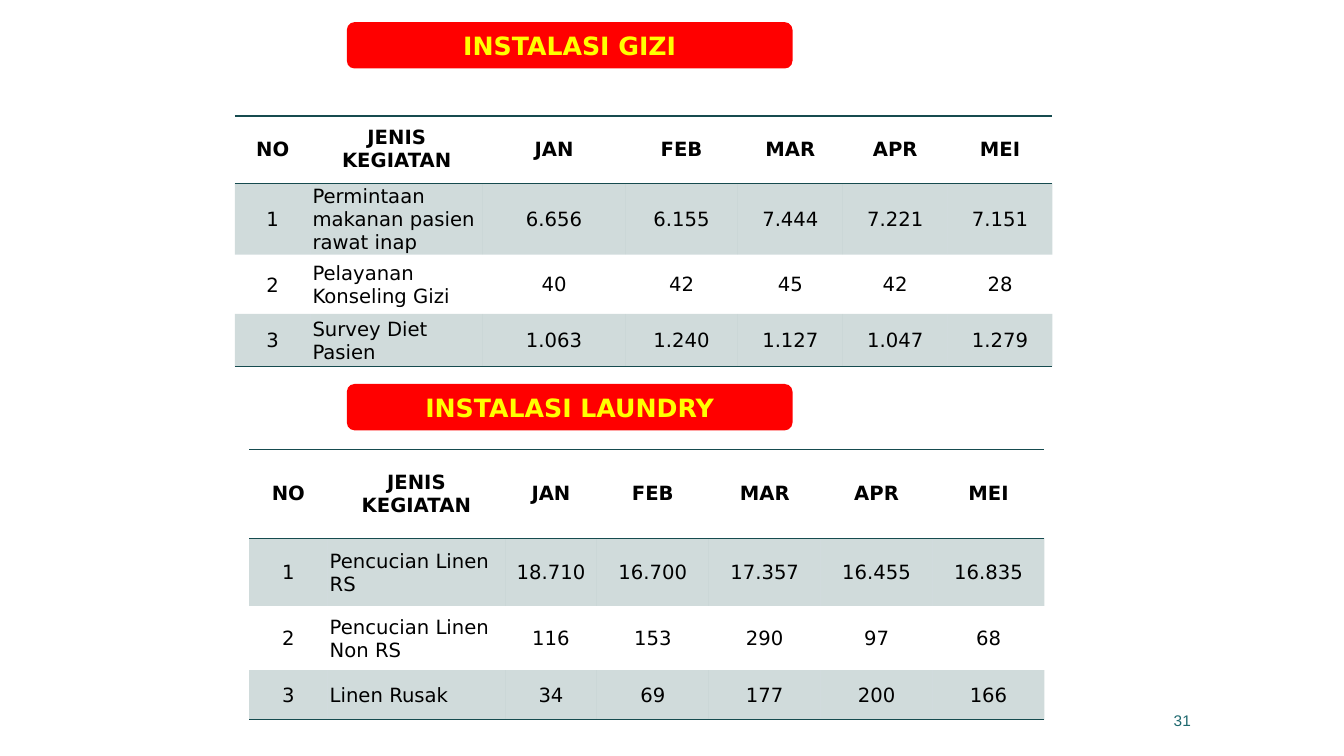
from lxml import etree
from pptx import Presentation
from pptx.dml import color as dml
from pptx.enum import shapes, text
from pptx.oxml import ns
from pptx.util import Inches, Pt

TEAL = "164B4F"
SANS = "DejaVu Sans"
PLAIN = "{2D5ABB26-0587-4C30-8999-92F81FD0307C}"
MID = text.MSO_ANCHOR.MIDDLE
LEFT, CENTER, RIGHT = (text.PP_ALIGN.LEFT, text.PP_ALIGN.CENTER,
                       text.PP_ALIGN.RIGHT)
HEAD = ["NO", "JENIS KEGIATAN", "JAN", "FEB", "MAR", "APR", "MEI"]

GIZI = [
    HEAD,
    ["1", "Permintaan makanan pasien rawat inap",
     "6.656", "6.155", "7.444", "7.221", "7.151"],
    ["2", "Pelayanan Konseling Gizi", "40", "42", "45", "42", "28"],
    ["3", "Survey Diet Pasien", "1.063", "1.240", "1.127", "1.047", "1.279"],
]
LAUNDRY = [
    HEAD,
    ["1", "Pencucian Linen RS",
     "18.710", "16.700", "17.357", "16.455", "16.835"],
    ["2", "Pencucian Linen Non RS", "116", "153", "290", "97", "68"],
    ["3", "Linen Rusak", "34", "69", "177", "200", "166"],
]


def rgb(code):
    return dml.RGBColor.from_string(code)


def put(obj, **vals):
    """Set each named attribute on obj."""
    for name, val in vals.items():
        setattr(obj, name, val)


def write(frame, words, align, color, **font):
    para = frame.paragraphs[0]
    para.alignment = align
    run = para.add_run()
    run.text = words
    put(run.font, **font)
    run.font.color.rgb = rgb(color)


def tint(cell, color, alpha):
    cell.fill.solid()
    cell.fill.fore_color.rgb = rgb(color)
    for node in cell._tc.tcPr.iter(ns.qn("a:srgbClr")):
        etree.SubElement(node, ns.qn("a:alpha"), val=str(alpha * 1000))


def rule(cell, sides):
    """Draw 1 pt lines on the given sides, placed ahead of the fill."""
    props = cell._tc.get_or_add_tcPr()
    for spot, side in enumerate(sides):
        line = etree.Element(ns.qn("a:ln" + side), w=str(Pt(1)))
        fill = etree.SubElement(line, ns.qn("a:solidFill"))
        etree.SubElement(fill, ns.qn("a:srgbClr"), val=TEAL)
        props.insert(spot, line)


def banner(slide, x, y, w, h, words):
    box = slide.shapes.add_shape(
        shapes.MSO_SHAPE.ROUNDED_RECTANGLE, *map(Inches, (x, y, w, h)))
    box.shadow.inherit = False
    box.fill.solid()
    box.fill.fore_color.rgb = rgb("FF0000")
    box.line.fill.background()
    box.text_frame.vertical_anchor = MID
    write(box.text_frame, words, CENTER, "FFFF00",
          name=SANS, size=Pt(18), bold=True)


def grid(slide, x, y, cols, rows, data, pad):
    """Place a table; pad is the top and bottom margin of its header."""
    frame = slide.shapes.add_table(
        len(rows), len(cols),
        *map(Inches, (x, y, sum(cols), sum(rows))))
    for node in frame.element.iter(ns.qn("a:tableStyleId")):
        node.text = PLAIN
    table = frame.table
    for col, width in zip(table.columns, cols):
        col.width = Inches(width)
    for row, height in zip(table.rows, rows):
        row.height = Inches(height)
    for r, line in enumerate(data):
        for c, words in enumerate(line):
            cell = table.cell(r, c)
            edge = 0.02 if c < 2 else 0.01
            side, top, low = (0.2, pad, pad) if r == 0 else (edge, edge, 0)
            put(cell, vertical_anchor=MID,
                margin_left=Inches(side), margin_right=Inches(side),
                margin_top=Inches(top), margin_bottom=Inches(low))
            write(cell.text_frame, words, LEFT if r and c == 1 else CENTER,
                  "000000", name=SANS, size=Pt(14), bold=r == 0)
            if r % 2:
                tint(cell, TEAL, 20)
            else:
                cell.fill.background()
            if r == 0:
                rule(cell, "TB")
            elif r == len(data) - 1:
                rule(cell, "B")


def number(slide, x, y, w, h, words):
    box = slide.shapes.add_textbox(*map(Inches, (x, y, w, h)))
    put(box.text_frame, word_wrap=True, vertical_anchor=MID)
    write(box.text_frame, words, RIGHT, "1F696F", name="Arial", size=Pt(11))


def main():
    deck = Presentation()
    put(deck, slide_width=Inches(13.33), slide_height=Inches(7.5))
    slide = deck.slides.add_slide(deck.slide_layouts[6])
    grid(slide, 2.33, 1.15, [0.75, 1.71, 1.41, 1.12] + [1.04] * 3,
         [0.67, 0.55, 0.59, 0.52], GIZI, 0.08)
    number(slide, 8.8, 6.95, 3.11, 0.4, "31")
    grid(slide, 2.47, 4.46, [0.78, 1.76, 0.91] + [1.11] * 4,
         [0.88, 0.67, 0.64, 0.49], LAUNDRY, 0.07)
    banner(slide, 3.44, 0.22, 4.42, 0.46, "INSTALASI GIZI")
    banner(slide, 3.44, 3.81, 4.42, 0.46, "INSTALASI LAUNDRY")
    deck.save("out.pptx")


if __name__ == "__main__":
    main()
